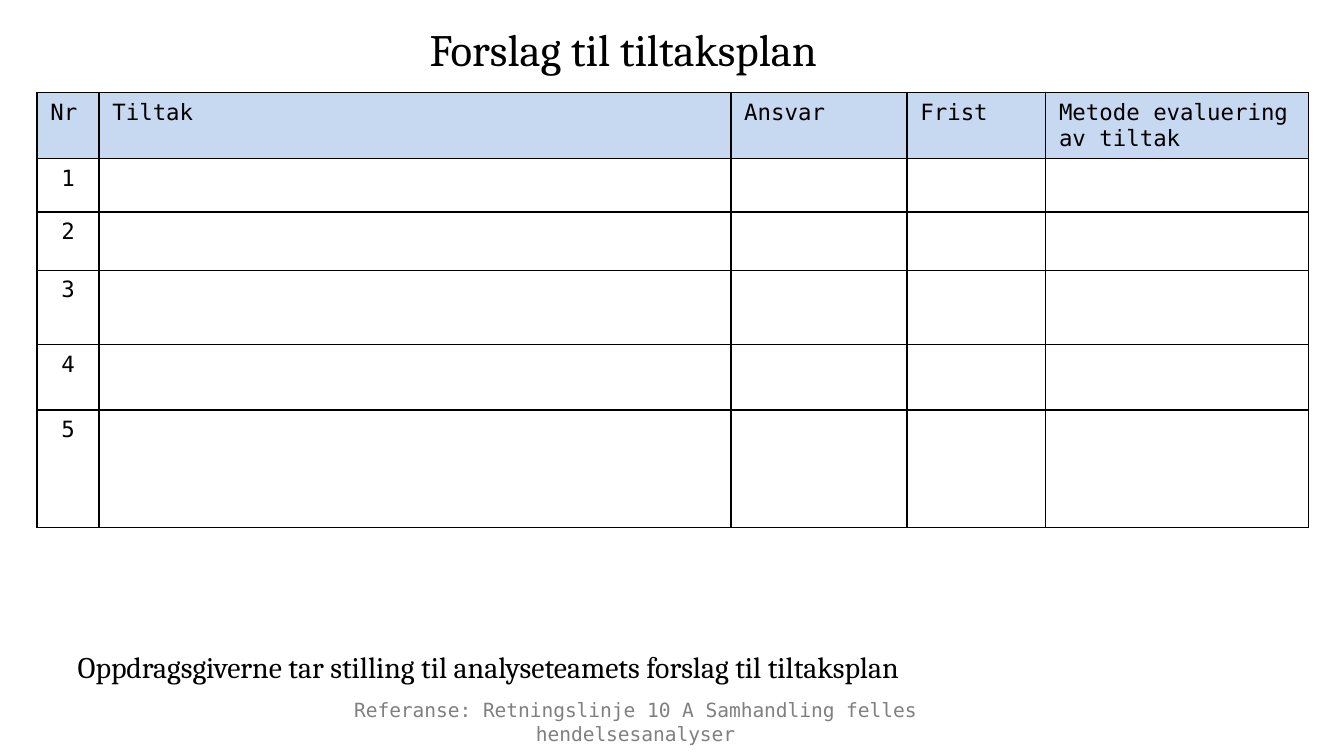
"""Build a slide with a proposed action plan table and its reference."""
from dataclasses import dataclass

import pptx
import pptx.dml.color
import pptx.enum.text
import pptx.oxml
import pptx.oxml.ns
import pptx.util

Cm = pptx.util.Cm
Pt = pptx.util.Pt
Align = pptx.enum.text.PP_ALIGN
Anchor = pptx.enum.text.MSO_ANCHOR

BLACK = pptx.dml.color.RGBColor(0x00, 0x00, 0x00)
GREY = pptx.dml.color.RGBColor(0x80, 0x80, 0x80)
BLUE = pptx.dml.color.RGBColor(0xC6, 0xD9, 0xF1)
SERIF = "Cambria"
MONO = "DejaVu Sans Mono"


@dataclass(frozen=True)
class Label:
    text: str
    left: float
    top: float
    width: float
    height: float
    size: float
    face: str
    color: pptx.dml.color.RGBColor = BLACK
    align: Align = Align.LEFT
    anchor: Anchor = Anchor.TOP


LABELS = [
    Label("Forslag til tiltaksplan ", 3.3, 0.53, 17.15, 0.79, 24, SERIF,
          align=Align.CENTER, anchor=Anchor.MIDDLE),
    Label("Oppdragsgiverne tar stilling til analyseteamets forslag til tiltaksplan",
          1.22, 12.12, 22.3, 0.94, 16, SERIF),
    Label("Referanse: Retningslinje 10 A Samhandling felles hendelsesanalyser",
          4.7, 13.06, 14.63, 0.76, 10.5, MONO, GREY, Align.CENTER),
]
HEADS = ["Nr", "Tiltak", "Ansvar", "Frist", "Metode evaluering av tiltak"]
COLS = [1.17, 11.94, 3.33, 2.62, 4.97]
ROWS = [1.24, 1.01, 1.1, 1.4, 1.24, 2.22]


def write(par, text: str, size: float, face: str, color, align: Align) -> None:
    """Add one styled run to a paragraph."""
    par.alignment = align
    run = par.add_run()
    run.text = text
    for name, value in {"size": Pt(size), "name": face}.items():
        setattr(run.font, name, value)
    run.font.color.rgb = color


def draw_label(slide, label: Label) -> None:
    """Draw a text box."""
    box = slide.shapes.add_textbox(
        *map(Cm, (label.left, label.top, label.width, label.height)))
    frame = box.text_frame
    for name, value in {"word_wrap": True, "vertical_anchor": label.anchor}.items():
        setattr(frame, name, value)
    write(frame.paragraphs[0], label.text, label.size, label.face,
          label.color, label.align)


def add_border(cell) -> None:
    """Rule all four sides of a cell."""
    props = cell._tc.get_or_add_tcPr()
    for spot, side in enumerate(("lnL", "lnR", "lnT", "lnB")):
        props.insert(spot, pptx.oxml.parse_xml(
            f'<a:{side} {pptx.oxml.ns.nsdecls("a")} w="{Pt(1)}">'
            f'<a:solidFill><a:srgbClr val="{BLACK}"/></a:solidFill></a:{side}>'))


def draw_plan(slide) -> None:
    """Draw the table with a header and numbered empty rows."""
    frame = slide.shapes.add_table(len(ROWS), len(COLS), Cm(0.7), Cm(1.75),
                                   Cm(sum(COLS)), Cm(sum(ROWS)))
    table = frame.table
    for name in ("first_row", "horz_banding"):
        setattr(table, name, False)
    for col, width in zip(table.columns, COLS):
        col.width = Cm(width)
    for row, height in zip(table.rows, ROWS):
        row.height = Cm(height)
    blanks = [""] * (len(HEADS) - 1)
    lines = [HEADS] + [[str(num), *blanks] for num in range(1, len(ROWS))]
    for row, line in enumerate(lines):
        for col, text in enumerate(line):
            cell = table.cell(row, col)
            par = cell.text_frame.paragraphs[0]
            if text:
                write(par, text, 12, MONO, BLACK,
                      Align.CENTER if row else Align.LEFT)
            else:
                par._p.append(pptx.oxml.parse_xml(
                    f'<a:endParaRPr {pptx.oxml.ns.nsdecls("a")} sz="1200"/>'))
            if row:
                cell.fill.background()
            else:
                cell.fill.solid()
                cell.fill.fore_color.rgb = BLUE
            add_border(cell)


def main() -> None:
    """Build and save the deck."""
    deck = pptx.Presentation()
    deck.slide_width, deck.slide_height = Cm(25.4), Cm(14.28)
    slide = deck.slides.add_slide(deck.slide_layouts[6])
    draw_plan(slide)
    for label in LABELS:
        draw_label(slide, label)
    deck.save("out.pptx")


if __name__ == "__main__":
    main()
